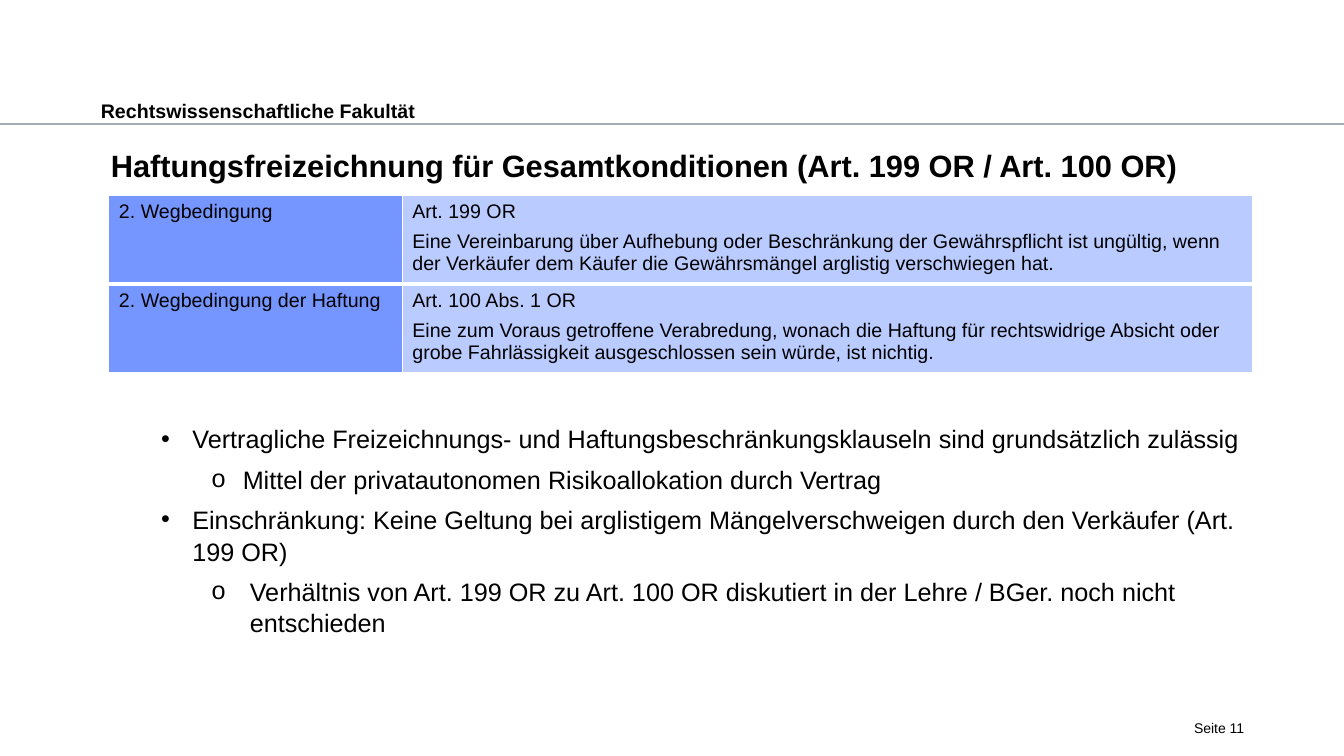
from lxml.etree import SubElement
from pptx import Presentation
from pptx.dml.color import RGBColor
from pptx.enum.shapes import MSO_CONNECTOR as Conn
from pptx.enum.text import MSO_ANCHOR as Anchor, MSO_AUTO_SIZE as Auto, PP_ALIGN as Align
from pptx.oxml.ns import qn
from pptx.util import Pt

PX = 9144  # 100 px to the inch
COLORS = {"ink": "000000", "rule": "A3ADB7", "edge": "FFFFFF",
          "label": "7596FF", "law": "BACBFF"}


def px(*sizes):
    return [size * PX for size in sizes]


def tone(name):
    return RGBColor.from_string(COLORS[name])


def write(para, text, size=14, bold=False, align=Align.LEFT, before=0,
          lines=None, mark=None, left=0, hang=0, level=0):
    """Fill one paragraph; mark is a bullet hung to the left of the text."""
    para.level = level
    para.alignment = align
    para.space_before = Pt(before)
    if lines:
        para.line_spacing = lines
    if mark:
        props = para._p.get_or_add_pPr()
        props.set("marL", str(left * PX))
        props.set("indent", str(-hang * PX))
        SubElement(props, qn("a:buFont"), typeface="Arial")
        SubElement(props, qn("a:buChar"), char=mark)
    run = para.add_run()
    run.text = text
    font = run.font
    font.name, font.size, font.bold = "Arial", Pt(size), bold
    font.color.rgb = tone("ink")


class Page:
    def __init__(self, deck):
        self.slide = deck.slides.add_slide(deck.slide_layouts[5])
        self.shapes = self.slide.shapes

    def frame(self, shape, pad):
        frame = shape.text_frame
        frame.word_wrap = True
        frame.auto_size = Auto.NONE
        frame.vertical_anchor = Anchor.TOP
        (frame.margin_left, frame.margin_top,
         frame.margin_right, frame.margin_bottom) = px(*pad)
        return frame

    def title(self, text, box, **style):
        shape = self.shapes.title
        shape.left, shape.top, shape.width, shape.height = px(*box)
        write(self.frame(shape, (10, 5, 10, 5)).paragraphs[0], text, **style)

    def text(self, box, items, pad=(0, 0, 0, 0)):
        frame = self.frame(self.shapes.add_textbox(*px(*box)), pad)
        for at, (text, style) in enumerate(items):
            para = frame.add_paragraph() if at else frame.paragraphs[0]
            write(para, text, **style)

    def rule(self, start, end, color, width):
        line = self.shapes.add_connector(Conn.STRAIGHT, *px(*start, *end))
        line.line.color.rgb = tone(color)
        line.line.width = Pt(width)
        SubElement(line._element.spPr, qn("a:effectLst"))

    def edges(self, cell, widths):
        props = cell._tc.get_or_add_tcPr()
        for side, width in zip("LRTB", widths):
            line = SubElement(props, qn(f"a:ln{side}"), w=str(Pt(width)))
            fill = SubElement(line, qn("a:solidFill"))
            SubElement(fill, qn("a:srgbClr"), val=COLORS["edge"])

    def table(self, box, cols, rows, fills):
        table = self.shapes.add_table(len(rows), len(cols), *px(*box)).table
        table.first_row = table.horz_banding = False
        for col, width in zip(table.columns, cols):
            col.width = width * PX
        last = len(rows) - 1
        for y, row in enumerate(rows):
            table.rows[y].height = box[3] // len(rows) * PX
            for x, texts in enumerate(row):
                cell = table.cell(y, x)
                # Rows are parted by a thicker edge
                self.edges(cell, (1, 1, 3 if y else 1, 3 if y < last else 1))
                cell.fill.solid()
                cell.fill.fore_color.rgb = tone(fills[x])
                for at, text in enumerate(texts):
                    frame = cell.text_frame
                    para = frame.add_paragraph() if at else frame.paragraphs[0]
                    write(para, text, before=6 if at else 0)


def main():
    deck = Presentation()
    deck.slide_width, deck.slide_height = px(1333, 750)
    page = Page(deck)

    # Header and page number
    page.rule((0, 123), (1333, 123), "rule", 1.25)
    page.text((100, 94, 802, 25),
              [("Rechtswissenschaftliche Fakultät", dict(bold=True))],
              pad=(0, 4, 0, 0))
    page.text((1143, 714, 91, 24),
              [("Seite 11", dict(size=10, align=Align.RIGHT))])

    # Title
    page.title("Haftungsfreizeichnung für Gesamtkonditionen (Art. 199 OR / Art. 100 OR)",
               (100, 139, 1166, 50), size=22, bold=True, lines=1.05)

    # Articles of law
    page.table((108, 194, 1134, 177), (291, 843), [
        [["2. Wegbedingung"],
         ["Art. 199 OR",
          "Eine Vereinbarung über Aufhebung oder Beschränkung der Gewährspflicht ist "
          "ungültig, wenn der Verkäufer dem Käufer die Gewährsmängel arglistig "
          "verschwiegen hat."]],
        [["2. Wegbedingung der Haftung"],
         ["Art. 100 Abs. 1 OR",
          "Eine zum Voraus getroffene Verabredung, wonach die Haftung für rechtswidrige "
          "Absicht oder grobe Fahrlässigkeit ausgeschlossen sein würde, ist nichtig."]],
    ], ("label", "law"))

    # Remarks
    body = dict(size=18, lines=1.05)
    main_point = dict(body, mark="•", left=81, hang=31, level=1)
    sub_point = dict(body, mark="o", before=6, level=2)
    page.text((100, 414, 1166, 219), [
        ("Vertragliche Freizeichnungs- und Haftungsbeschränkungsklauseln sind "
         "grundsätzlich zulässig", main_point),
        ("Mittel der privatautonomen Risikoallokation durch Vertrag",
         dict(sub_point, left=131, hang=31)),
        ("Einschränkung: Keine Geltung bei arglistigem Mängelverschweigen durch den "
         "Verkäufer (Art. 199 OR)", dict(main_point, before=6)),
        ("Verhältnis von Art. 199 OR zu Art. 100 OR diskutiert in der Lehre / BGer. "
         "noch nicht entschieden", dict(sub_point, left=138, hang=38)),
    ], pad=(10, 5, 10, 5))

    deck.save("out.pptx")


if __name__ == "__main__":
    main()
